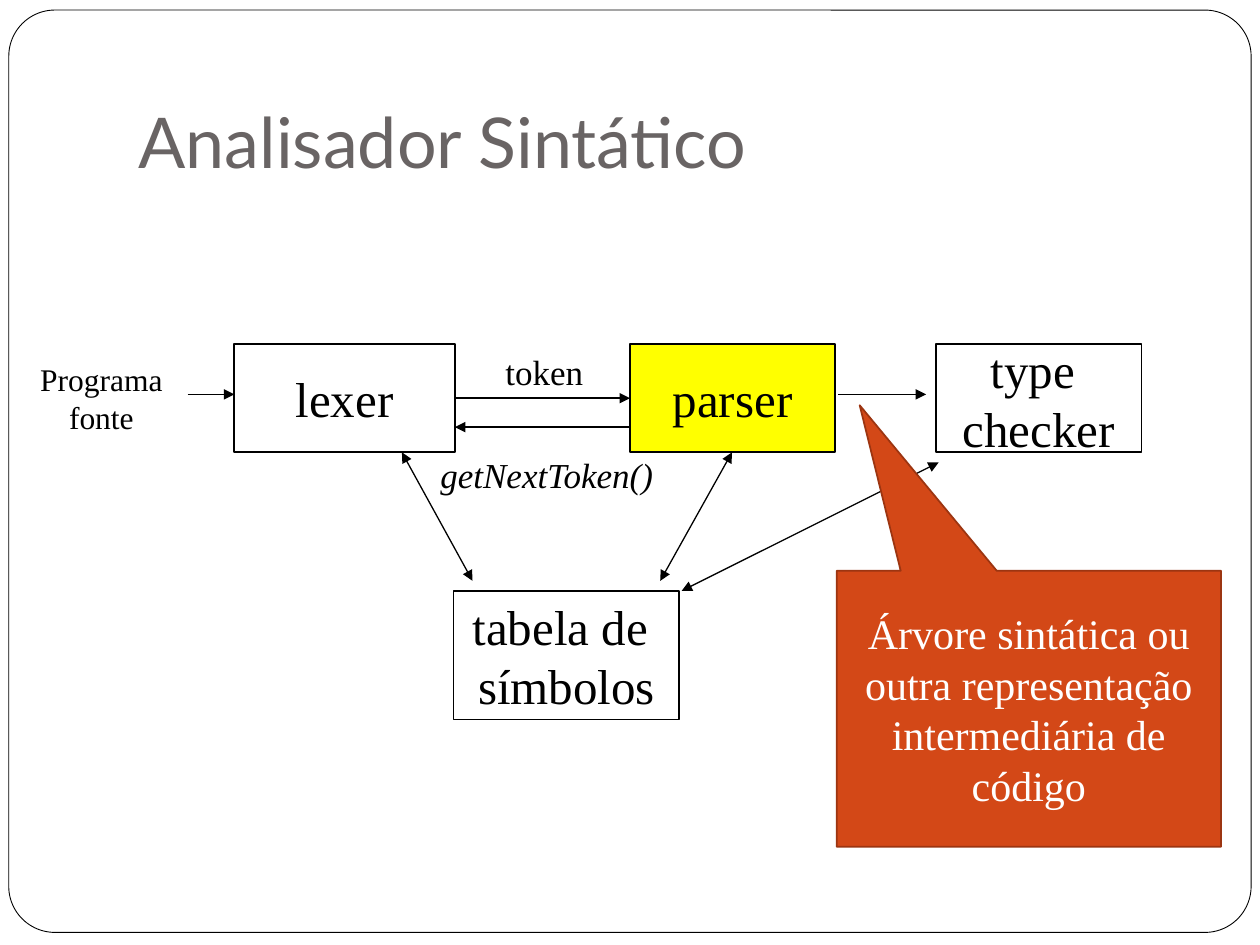
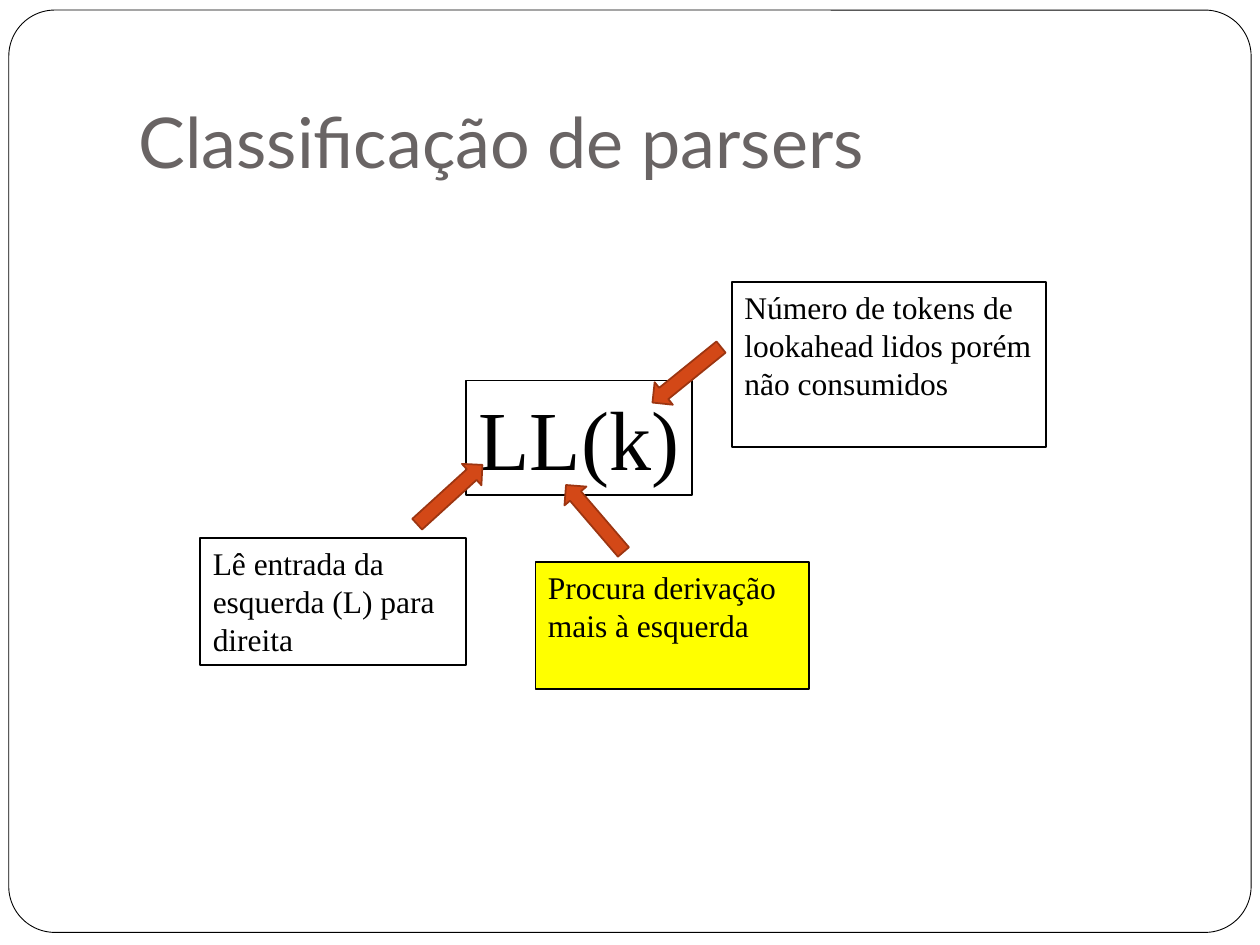
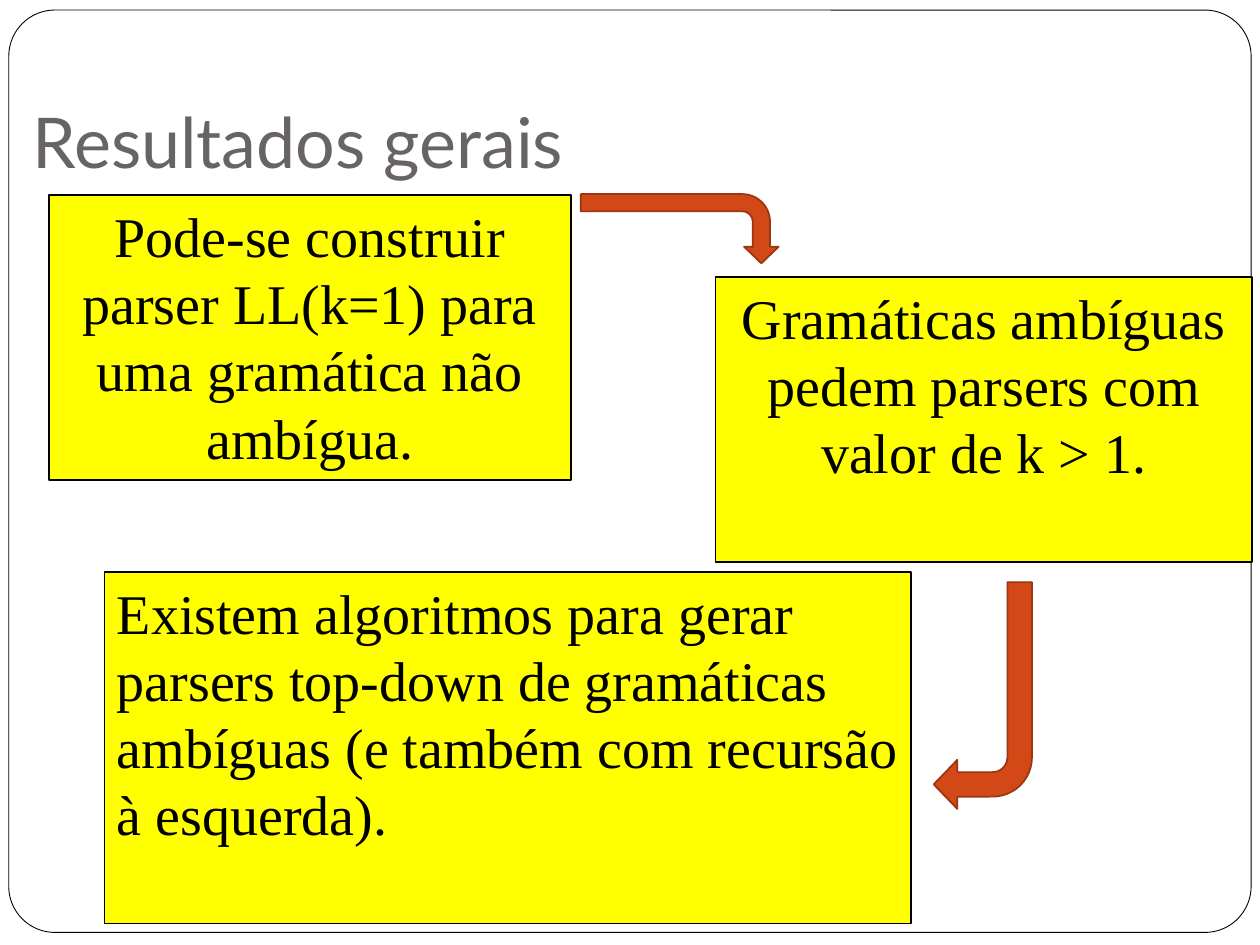
from lxml import etree
from pptx import Presentation
from pptx import util as u
from pptx.dml.color import RGBColor
from pptx.enum import shapes, text
from pptx.oxml import ns

BLACK = RGBColor(0x00, 0x00, 0x00)
WHITE = RGBColor(0xFF, 0xFF, 0xFF)
YELLOW = RGBColor(0xFF, 0xFF, 0x00)
GRAY = RGBColor(0x69, 0x64, 0x64)
ORANGE = RGBColor(0xD3, 0x48, 0x17)
RUST = RGBColor(0x9C, 0x35, 0x11)

CELL = u.Inches(0.1)
COLS, ROWS = 100, 75
TITLE_FONT, BODY_FONT = "Lato", "Times New Roman"
KIND = shapes.MSO_SHAPE
CENTER, LEFT = text.PP_ALIGN.CENTER, text.PP_ALIGN.LEFT
TOP, MIDDLE, BOTTOM = (text.MSO_ANCHOR.TOP, text.MSO_ANCHOR.MIDDLE,
                       text.MSO_ANCHOR.BOTTOM)

FRAME = (0.7, 0.8, 98.6, 73.2)
TITLE = (10, 3, 85, 12.5)
WIDE_TITLE = (1.6, 3, 96.1, 12.5)

STAGE_TOP, STAGE_H = 27.3, 8.6
STAGES = {
    "lexer": ("lexer", 18.6, 17.5, WHITE),
    "parser": ("parser", 50, 16.3, YELLOW),
    "checker": ("type \nchecker", 74.3, 16.3, WHITE),
}
SYMBOLS = ("tabela de \vsímbolos", (36, 46.9, 17.9, 10.2))
LABELS = [
    ("Programa\vfonte", (2.1, 28.1, 11.9, 7.1), dict(size=18, wrap=False)),
    ("getNextToken()", (32.1, 35.5, 22.6, 4.4), dict(size=20, italic=True)),
    ("token", (38.4, 27.3, 9.6, 4.4), dict(size=20)),
]
CALLOUT = ("Árvore sintática ou outra representação intermediária de código",
           (66.4, 45.3, 30.5, 21.9), (-0.44, -1.1))

LL_NOTES = [
    ("LL(k)", (37, 30.2, 17.9, 9.1), WHITE, 48),
    ("Lê entrada da esquerda (L) para direita", (15.9, 42.7, 21.1, 10.1), None, 18),
    ("Procura derivação mais à esquerda", (42.5, 44.6, 21.7, 10.1), YELLOW, 18),
    ("Número de tokens de lookahead lidos porém não consumidos",
     (58.1, 22.4, 24.9, 13.1), None, 18),
]
LL_ARROWS = [(32.2, 38.1, 317.7), (43.7, 40, 229.4), (51, 28.6, 141)]

RESULTS = [
    ("Pode-se construir parser LL(k=1) para uma gramática não ambígua.",
     (3.9, 15.5, 41.4, 22.6), CENTER),
    ("Gramáticas ambíguas pedem parsers com valor de k > 1.",
     (56.8, 22, 42.6, 22.6), CENTER),
    ("Existem algoritmos para gerar parsers top-down de gramáticas ambíguas "
     "(e também com recursão à esquerda).", (8.3, 45.4, 64, 27.9), LEFT),
]
BENDS = [((51.2, 10.3, 5.5, 15.7), 90), ((74.1, 46.2, 7.8, 18), 180)]
BEND_ADJ = (0.25, 0.25, 0.24, 0.4)


def cells(*lengths):
    return [round(n * CELL) for n in lengths]


def write(tf, content, size=18, color=BLACK, font=BODY_FONT, italic=False,
          align=CENTER, anchor=TOP, wrap=True):
    tf.word_wrap = wrap
    tf.auto_size = text.MSO_AUTO_SIZE.NONE
    tf.vertical_anchor = anchor
    tf.text = content
    for p in tf.paragraphs:
        p.alignment = align
        for r in p.runs:
            r.font.name = font
            r.font.size = u.Pt(size)
            r.font.italic = italic
            r.font.color.rgb = color


def add_shape(s, at, kind=KIND.RECTANGLE, fill=None, line=BLACK, width=1,
              adj=(), rotation=0, content=None, **fmt):
    sp = s.shapes.add_shape(kind, *cells(*at))
    sp.shadow.inherit = False
    if fill is None:
        sp.fill.background()
    else:
        sp.fill.solid()
        sp.fill.fore_color.rgb = fill
    sp.line.color.rgb = line
    sp.line.width = u.Pt(width)
    sp.rotation = rotation
    for i, value in enumerate(adj):
        sp.adjustments[i] = value
    if content:
        write(sp.text_frame, content, **fmt)
    return sp


def add_arrow(s, start, end, double=False):
    c = s.shapes.add_connector(shapes.MSO_CONNECTOR.STRAIGHT, *cells(*start, *end))
    c.line.color.rgb = BLACK
    c.line.width = u.Pt(0.75)
    ln = c.line._get_or_add_ln()
    for tag in (["a:headEnd"] if double else []) + ["a:tailEnd"]:
        etree.SubElement(ln, ns.qn(tag), type="triangle")
    etree.SubElement(c.element.spPr, ns.qn("a:effectLst"))


def add_slide(prs, layout, title, at=TITLE):
    s = prs.slides.add_slide(layout)
    sp = s.shapes.title
    sp.left, sp.top, sp.width, sp.height = cells(*at)
    tf = sp.text_frame
    tf.margin_left = tf.margin_right = tf.margin_bottom = CELL
    tf.margin_top = CELL // 2
    write(tf, title, size=40, color=GRAY, font=TITLE_FONT, align=LEFT, anchor=BOTTOM)
    return s


def build_pipeline(s):
    for content, at, fmt in LABELS:
        write(s.shapes.add_textbox(*cells(*at)).text_frame, content, **fmt)
    boxes = [(name, (left, STAGE_TOP, width, STAGE_H), fill)
             for name, left, width, fill in STAGES.values()]
    for name, at, fill in boxes + [(*SYMBOLS, WHITE)]:
        add_shape(s, at, fill=fill, content=name, size=28, anchor=MIDDLE, wrap=False)

    lexer, parser = STAGES["lexer"][1], STAGES["parser"][1]
    lexer_right = lexer + STAGES["lexer"][2]
    stage_bottom = STAGE_TOP + STAGE_H
    left, top, width, _ = SYMBOLS[1]
    flow_y, token_y, request_y = 31.3, 31.6, 33.9
    add_arrow(s, (lexer_right, token_y), (parser, token_y))
    add_arrow(s, (parser, request_y), (lexer_right, request_y))
    add_arrow(s, (14.9, flow_y), (lexer, flow_y))
    add_arrow(s, (66.5, flow_y), (73.5, flow_y))
    add_arrow(s, (left + 1.5, top - 0.8), (31.9, stage_bottom), double=True)
    add_arrow(s, (left + width - 1.5, top - 0.8), (58.1, stage_bottom), double=True)
    add_arrow(s, (left + width + 0.2, top), (74.5, stage_bottom + 0.8), double=True)

    content, at, adj = CALLOUT
    add_shape(s, at, KIND.RECTANGULAR_CALLOUT, ORANGE, RUST, adj=adj,
              content=content, size=24, color=WHITE, anchor=MIDDLE)


def build_classification(s):
    for content, at, fill, size in LL_NOTES:
        add_shape(s, at, fill=fill, content=content, size=size, align=LEFT)
    for left, top, rotation in LL_ARROWS:
        add_shape(s, (left, top, 7, 2.3), KIND.RIGHT_ARROW, ORANGE, RUST,
                  rotation=rotation)


def build_results(s):
    for content, at, align in RESULTS:
        add_shape(s, at, fill=YELLOW, content=content, size=32, align=align)
    for at, rotation in BENDS:
        add_shape(s, at, KIND.BENT_ARROW, ORANGE, RUST, adj=BEND_ADJ,
                  rotation=rotation)


def main():
    prs = Presentation()
    prs.slide_width, prs.slide_height = cells(COLS, ROWS)
    layout = prs.slide_layouts.get_by_name("Title Only")
    first = add_slide(prs, layout, "Analisador Sintático")
    frame = add_shape(first, FRAME, KIND.ROUNDED_RECTANGLE, WHITE, width=0.5, adj=(0.05,))
    layout.shapes.element.insert(2, frame.element)
    build_pipeline(first)
    build_classification(add_slide(prs, layout, "Classificação de parsers"))
    build_results(add_slide(prs, layout, "Resultados gerais", WIDE_TITLE))
    prs.save("out.pptx")


if __name__ == "__main__":
    main()
